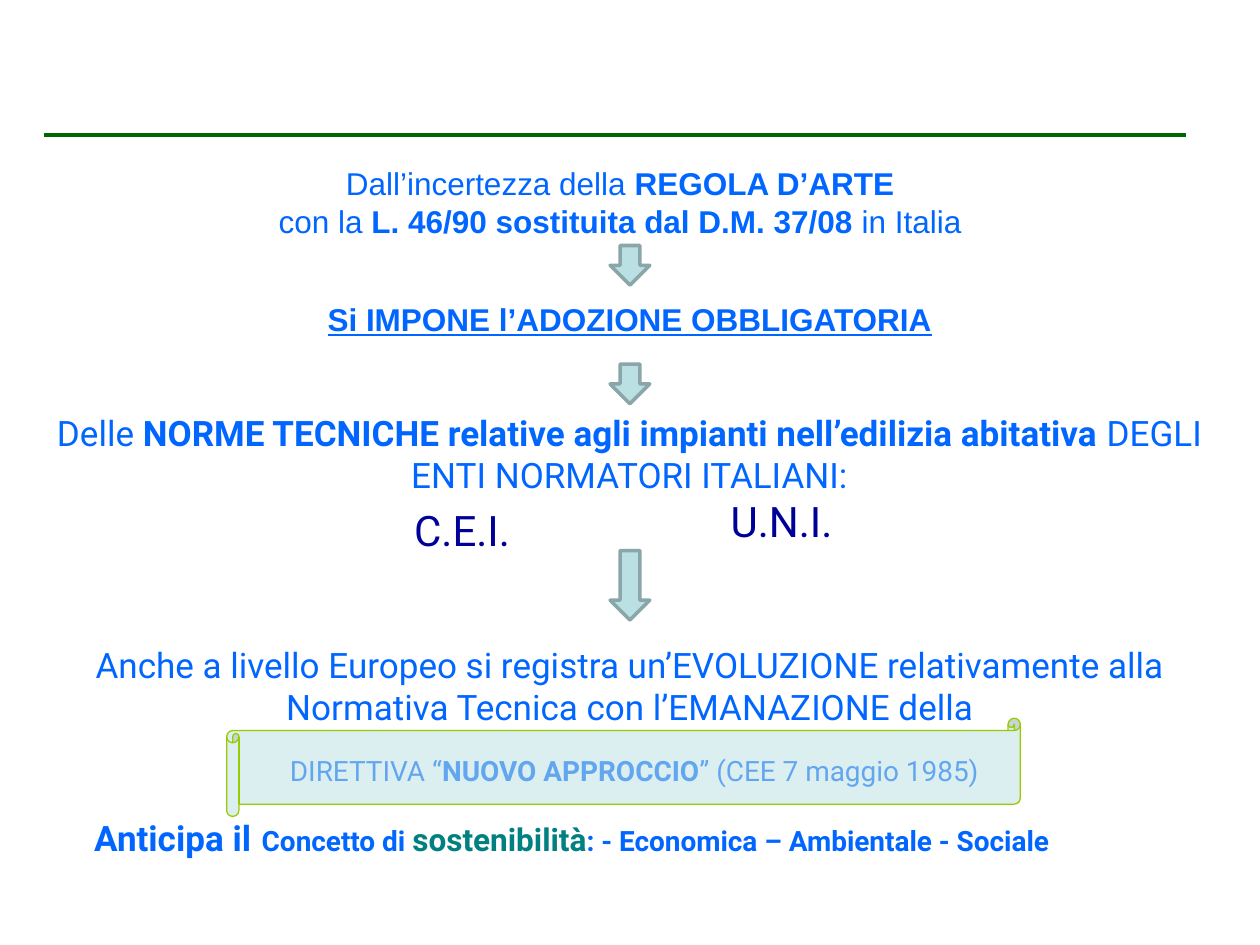
import pptx
import pptx.util
import pptx.dml.color
import pptx.enum.shapes
import pptx.enum.text
import pptx.oxml.ns
import lxml.etree

Cm, Pt = pptx.util.Cm, pptx.util.Pt
SHAPES = pptx.enum.shapes.MSO_SHAPE
CENTER = pptx.enum.text.PP_ALIGN.CENTER
LEFT = pptx.enum.text.PP_ALIGN.LEFT
BLUE, NAVY, TEAL, GREEN = "0066FF", "000099", "008080", "006600"
PALE, GREY, LIME = "BBE0E3", "8AA6A8", "99CC00"


def color(value):
    return pptx.dml.color.RGBColor.from_string(value)


class Page:
    """Holds the slide and the text style, and draws each kind of element."""

    def __init__(self, slide, font="Roboto", ink=BLUE):
        self.slide, self.font, self.ink = slide, font, ink

    def rule(self, x1, x2, y, ink, width):
        line = self.slide.shapes.add_connector(
            pptx.enum.shapes.MSO_CONNECTOR.STRAIGHT, Cm(x1), Cm(y), Cm(x2), Cm(y))
        line.line.color.rgb = color(ink)
        line.line.width = Pt(width)
        lxml.etree.SubElement(line._element.spPr, pptx.oxml.ns.qn("a:effectLst"))

    def text(self, left, top, width, height):
        box = self.slide.shapes.add_textbox(Cm(left), Cm(top), Cm(width), Cm(height))
        box.text_frame.word_wrap = True
        return box.text_frame

    def paragraph(self, frame, runs, size, align=CENTER, font=None, ink=None,
                  bold=None, before=None, right=None):
        """Each run is a string, or a string with its own font settings."""
        first = frame.paragraphs[0]
        para = frame.add_paragraph() if first.runs else first
        para.alignment = align
        if before:
            para.space_before = Pt(before)
        if right:
            para._p.get_or_add_pPr().set("marR", str(Cm(right)))
        para.font.name = font or self.font
        para.font.size = Pt(size)
        para.font.bold = bold
        para.font.color.rgb = color(ink or self.ink)
        for item in runs:
            words, style = (item, {}) if isinstance(item, str) else item
            run = para.add_run()
            run.text = words
            run.font.name = font or self.font
            run.font.size = Pt(style.get("size", size))
            run.font.bold = style.get("bold", bold)
            run.font.underline = style.get("underline")
            run.font.color.rgb = color(style.get("ink", ink or self.ink))

    def shape(self, kind, left, top, width, height, fill, line, weight, opacity=None):
        shape = self.slide.shapes.add_shape(kind, Cm(left), Cm(top), Cm(width), Cm(height))
        shape.shadow.inherit = False
        shape.fill.solid()
        shape.fill.fore_color.rgb = color(fill)
        shape.line.color.rgb = color(line)
        shape.line.width = Pt(weight)
        if opacity:
            tint = shape._element.spPr.find(
                pptx.oxml.ns.qn("a:solidFill") + "/" + pptx.oxml.ns.qn("a:srgbClr"))
            lxml.etree.SubElement(tint, pptx.oxml.ns.qn("a:alpha"), val=str(opacity * 1000))
        return shape

    def arrow(self, top, height):
        self.shape(SHAPES.DOWN_ARROW, 12.3, top, 0.8, height, PALE, GREY, 2)


def main():
    deck = pptx.Presentation()
    deck.slide_width, deck.slide_height = Cm(25.4), Cm(19.05)
    page = Page(deck.slides.add_slide(deck.slide_layouts[6]))
    bold = {"bold": True}

    # Header rule
    page.rule(0.89, 23.9, 2.72, GREEN, 2)

    # National law and the obligation it brings
    law = page.text(1.3, 3.18, 22.8, 1.78)
    page.paragraph(law, ["Dall’incertezza della ", ("REGOLA D’ARTE", bold)], 18,
                   font="Arial", right=0.4)
    page.paragraph(law, ["con la ", ("L. 46/90 sostituita dal D.M. 37/08 ", bold),
                         "in Italia"], 18, font="Arial")
    duty = page.text(3.87, 5.92, 17.65, 1.02)
    page.paragraph(duty, [("Si IMPONE l’ADOZIONE OBBLIGATORIA", {"underline": True})], 18,
                   font="Arial", bold=True)

    # Technical standards and their bodies
    standards = page.text(0.89, 8.18, 23.6, 1.96)
    page.paragraph(standards, [
        "Delle ",
        ("NORME TECNICHE relative agli impianti nell’edilizia abitativa ", bold),
        "DEGLI ENTI NORMATORI ITALIANI:"], 20)
    for body, left, top, width in [("U.N.I.", 14.48, 9.86, 3), ("C.E.I.", 8.1, 10.04, 2.62)]:
        page.paragraph(page.text(left, top, width, 1.27), [body], 24, LEFT, ink=NAVY)

    # European level
    europe = page.text(1.65, 12.85, 22.1, 5.6)
    page.paragraph(europe, ["Anche a livello Europeo si registra un’EVOLUZIONE relativamente "
                            "alla Normativa Tecnica con l’EMANAZIONE della"], 20)
    page.paragraph(europe, [
        (" ", {"size": 20}), "DIRETTIVA “", ("NUOVO APPROCCIO", bold),
        "” (CEE 7 maggio 1985)"], 16, before=11)
    page.paragraph(europe, [
        ("Anticipa il", {"size": 20}), (" ", {"size": 24}), "Concetto di ",
        ("sostenibilità", {"size": 18, "ink": TEAL}),
        ": - Economica – Ambientale - Sociale"], 16, LEFT, bold=True, before=12)

    # Arrows between the steps
    for top, height in [(4.95, 0.8), (7.34, 0.8), (11.1, 1.4)]:
        page.arrow(top, height)

    # Translucent scroll over the directive
    scroll = page.shape(SHAPES.HORIZONTAL_SCROLL, 4.57, 14.48, 16, 1.98, PALE, LIME, 0.75,
                        opacity=53)
    scroll.adjustments[0] = 0.125

    deck.save("out.pptx")


if __name__ == "__main__":
    main()
